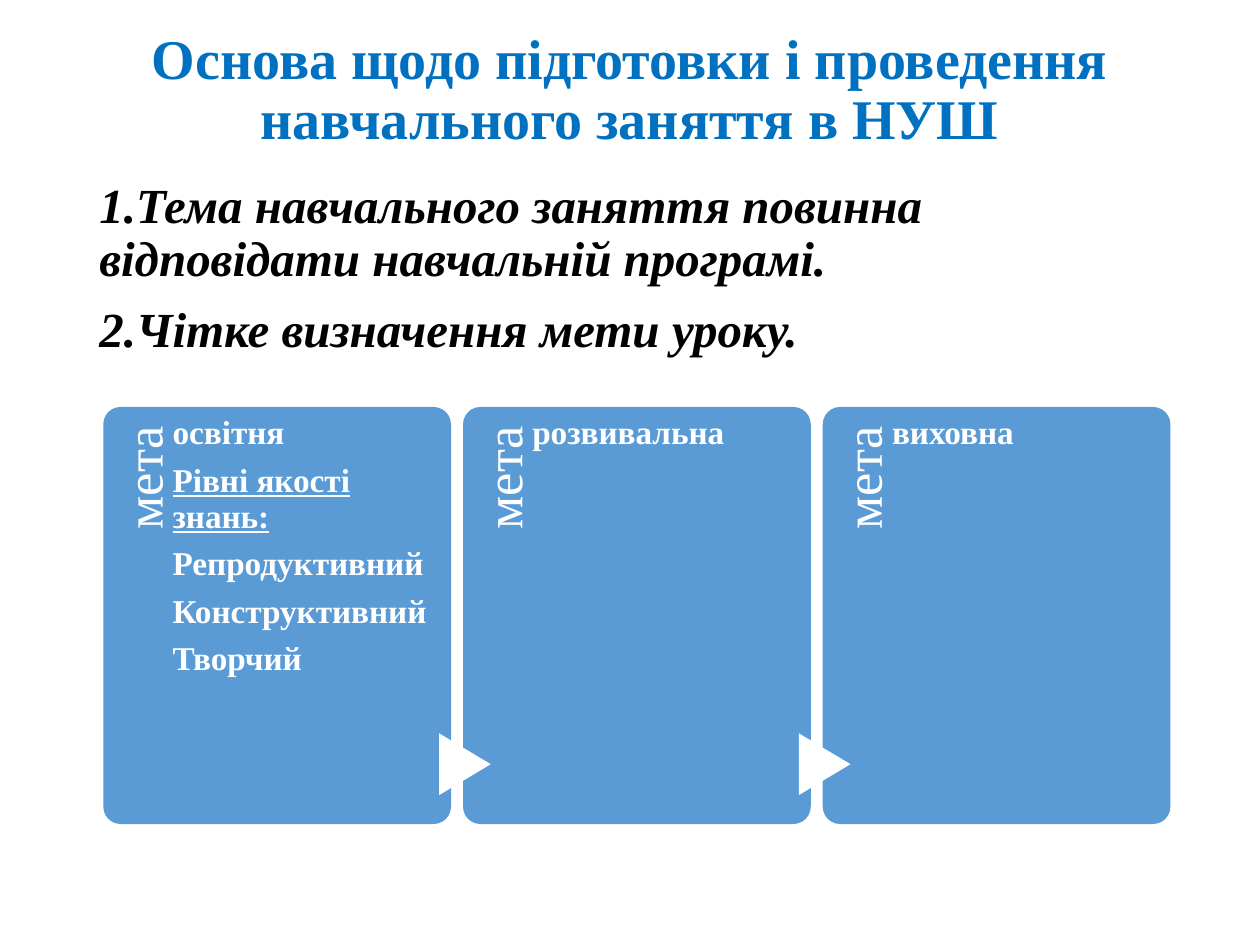
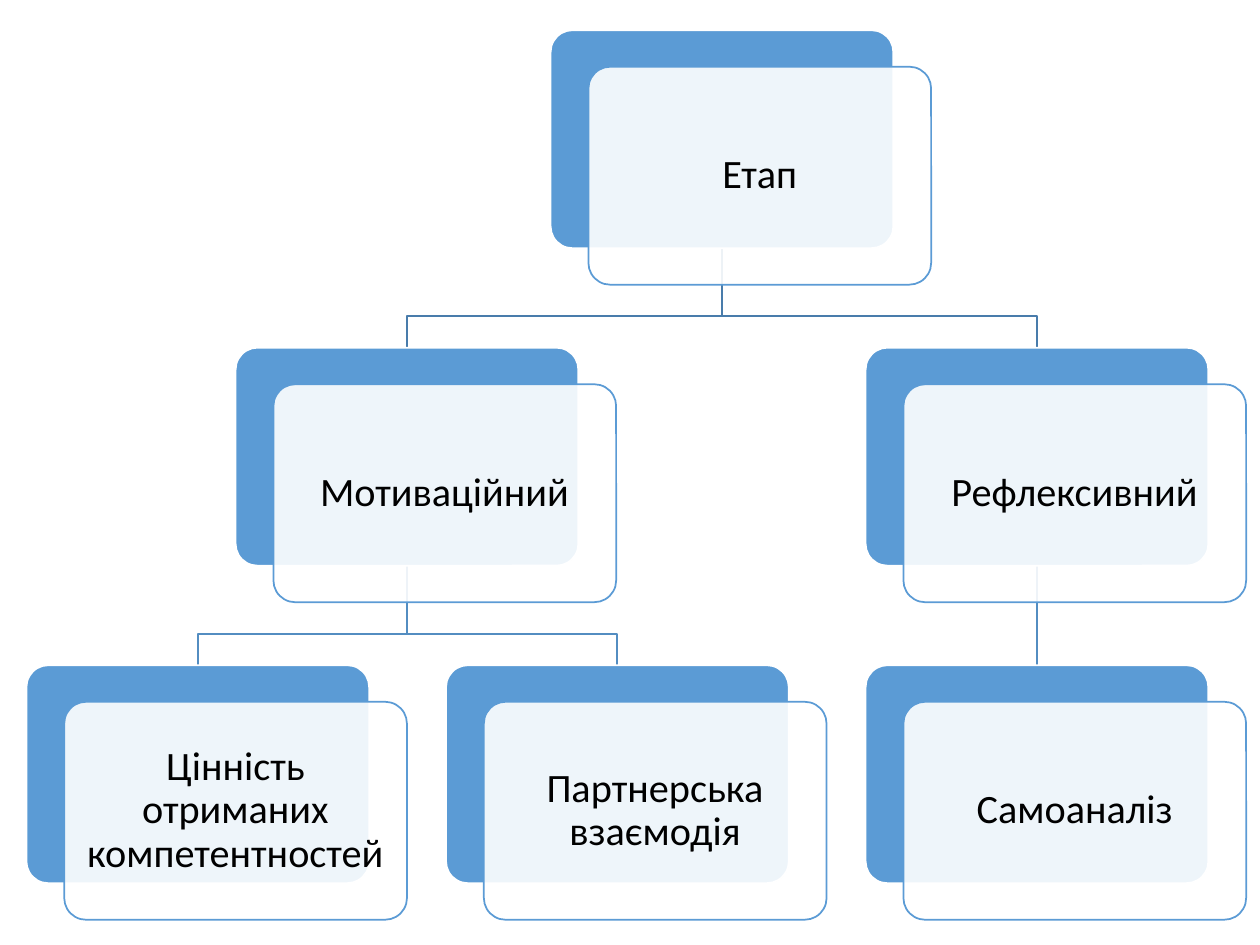
from lxml import etree
from pptx import Presentation
from pptx.dml.color import RGBColor
from pptx.enum.shapes import MSO_CONNECTOR, MSO_SHAPE
from pptx.enum.text import MSO_ANCHOR, MSO_AUTO_SIZE, PP_ALIGN
from pptx.oxml.ns import qn
from pptx.util import Inches, Pt

STRAIGHT = MSO_CONNECTOR.STRAIGHT
ROUNDED = MSO_SHAPE.ROUNDED_RECTANGLE
TRIANGLE = MSO_SHAPE.FLOWCHART_EXTRACT
TOP, MIDDLE = MSO_ANCHOR.TOP, MSO_ANCHOR.MIDDLE
LEFT, CENTER, RIGHT = PP_ALIGN.LEFT, PP_ALIGN.CENTER, PP_ALIGN.RIGHT
TITLE_ONLY, BLANK = 5, 6
BOTTOM_SIDE, TOP_SIDE = 2, 0

COLORS = {
    "title": "0070C0",
    "text": "000000",
    "white": "FFFFFF",
    "block": "5B9BD5",
    "upper_link": "497CAB",
    "lower_link": "538DC1",
}
SERIF, SANS = "Times New Roman", "Calibri"
CARD_WIDTH, CARD_HEIGHT = 2.72, 1.73
CARD_SHIFT_X, CARD_SHIFT_Y = 0.3, 0.29
BEND = 0.54


def color(name):
    return RGBColor.from_string(COLORS[name])


def write(frame, lines, size=19, font=SERIF, ink="text", bold=False, italic=False,
          align=LEFT, anchor=TOP, insets=(0.1, 0.05, 0.1, 0.05), before=0, after=0,
          underlined=()):
    frame.word_wrap = True
    frame.auto_size = MSO_AUTO_SIZE.NONE
    frame.vertical_anchor = anchor
    (frame.margin_left, frame.margin_top,
     frame.margin_right, frame.margin_bottom) = map(Inches, insets)
    for index, line in enumerate(lines):
        para = frame.paragraphs[0] if index == 0 else frame.add_paragraph()
        para.alignment = align
        para.line_spacing = 0.9
        para.space_before = Pt(before if index else 0)
        para.space_after = Pt(after)
        span = para.add_run()
        span.text = line
        span.font.size = Pt(size)
        span.font.name = font
        span.font.bold = bold
        span.font.italic = italic
        span.font.underline = line in underlined
        span.font.color.rgb = color(ink)


class Builder:
    def __init__(self):
        self.deck = Presentation()
        self.deck.slide_width = Inches(10)
        self.deck.slide_height = Inches(7.5)
        self.page = None

    def new_page(self, layout):
        self.page = self.deck.slides.add_slide(self.deck.slide_layouts[layout])

    def title(self, text, left, top, width, height):
        box = self.page.shapes.title
        box.left, box.top, box.width, box.height = map(Inches, (left, top, width, height))
        write(box.text_frame, [text], size=32, ink="title", bold=True,
              align=CENTER, anchor=MIDDLE)

    def text(self, lines, left, top, width, height, rotation=0, **style):
        box = self.page.shapes.add_textbox(*map(Inches, (left, top, width, height)))
        box.rotation = rotation
        write(box.text_frame, lines, **style)

    def shape(self, kind, left, top, width, height, fill, line=None, corner=None,
              opacity=100, rotation=0):
        shape = self.page.shapes.add_shape(kind, *map(Inches, (left, top, width, height)))
        shape.shadow.inherit = False
        shape.rotation = rotation
        if corner is not None:
            shape.adjustments[0] = corner
        shape.fill.solid()
        shape.fill.fore_color.rgb = color(fill)
        if opacity < 100:
            paint = shape.fill._xPr.find(qn("a:solidFill"))[0]
            etree.SubElement(paint, qn("a:alpha")).set("val", str(opacity * 1000))
        if line:
            shape.line.color.rgb = color(line)
            shape.line.width = Pt(1)
        else:
            shape.line.fill.background()
        return shape

    def card(self, text, left, top):
        plate = self.shape(ROUNDED, left, top, CARD_WIDTH, CARD_HEIGHT,
                           "block", line="white", corner=0.1)
        front = self.shape(ROUNDED, left + CARD_SHIFT_X, top + CARD_SHIFT_Y,
                           CARD_WIDTH, CARD_HEIGHT, "white", line="block",
                           corner=0.1, opacity=90)
        write(front.text_frame, [text], size=23, font=SANS, align=CENTER,
              anchor=MIDDLE, insets=(0.1,) * 4)
        return plate

    def link(self, parent, child, ink):
        start_x = parent.left + parent.width // 2
        start_y = parent.top + parent.height
        end_x = child.left + child.width // 2
        if start_x == end_x:
            line = self.page.shapes.add_connector(STRAIGHT, start_x, start_y, end_x, child.top)
            line.begin_connect(parent, BOTTOM_SIDE)
            line.end_connect(child, TOP_SIDE)
            etree.SubElement(line._element.spPr, qn("a:effectLst"))
        else:
            bend_y = start_y + Inches(BEND)
            outline = self.page.shapes.build_freeform(start_x, start_y)
            outline.add_line_segments(
                [(start_x, bend_y), (end_x, bend_y), (end_x, child.top)], close=False)
            line = outline.convert_to_shape()
            line.fill.background()
            line.shadow.inherit = False
        line.line.color.rgb = color(ink)
        line.line.width = Pt(1)
        line._element.getparent().insert(2, line._element)


def build_goals(builder):
    builder.new_page(TITLE_ONLY)
    builder.title("Основа щодо підготовки і проведення навчального заняття в НУШ",
                  0.69, 0.15, 8.62, 1.15)
    builder.text(["1.Тема навчального заняття повинна відповідати навчальній програмі.",
                  "2.Чітке визначення мети уроку."],
                 0.69, 1.39, 8.62, 1.7, size=28, bold=True, italic=True, before=10)
    levels = "Рівні якості знань:"
    goals = [["освітня", levels, "Репродуктивний", "Конструктивний", "Творчий"],
             ["розвивальна"], ["виховна"]]
    first, last, top, height = 0.82, 6.53, 3.23, 3.31
    step = (last - first) / (len(goals) - 1)
    for index, lines in enumerate(goals):
        left = first + index * step
        builder.shape(ROUNDED, left, top, 2.76, height, "block", corner=0.05)
        builder.text(["мета"], left - 1.08, 4.31, 2.71, 0.55, rotation=270, size=30,
                     ink="white", align=RIGHT, insets=(0, 0.11, 0.15, 0))
        if index:
            builder.shape(TRIANGLE, left - 0.23, 5.86, 0.49, 0.41, "white", rotation=90)
        builder.text(lines, left + 0.55, top, 2.05, height, ink="white", bold=True,
                     insets=(0, 0.07, 0, 0), after=6.65, underlined=(levels,))


def build_stages(builder):
    builder.new_page(BLANK)
    rows = [0.24 + level * 2.52 for level in range(3)]
    stage = builder.card("Етап", 4.37, rows[0])
    motivation = builder.card("Мотиваційний", 1.87, rows[1])
    value = builder.card("Цінність отриманих компетентностей", 0.21, rows[2])
    partnership = builder.card("Партнерська взаємодія", 3.54, rows[2])
    reflection = builder.card("Рефлексивний", 6.87, rows[1])
    analysis = builder.card("Самоаналіз", 6.87, rows[2])
    for child in (motivation, reflection):
        builder.link(stage, child, "upper_link")
    for parent, child in ((motivation, value), (motivation, partnership),
                          (reflection, analysis)):
        builder.link(parent, child, "lower_link")


def main():
    builder = Builder()
    build_goals(builder)
    build_stages(builder)
    builder.deck.save("out.pptx")


if __name__ == "__main__":
    main()
